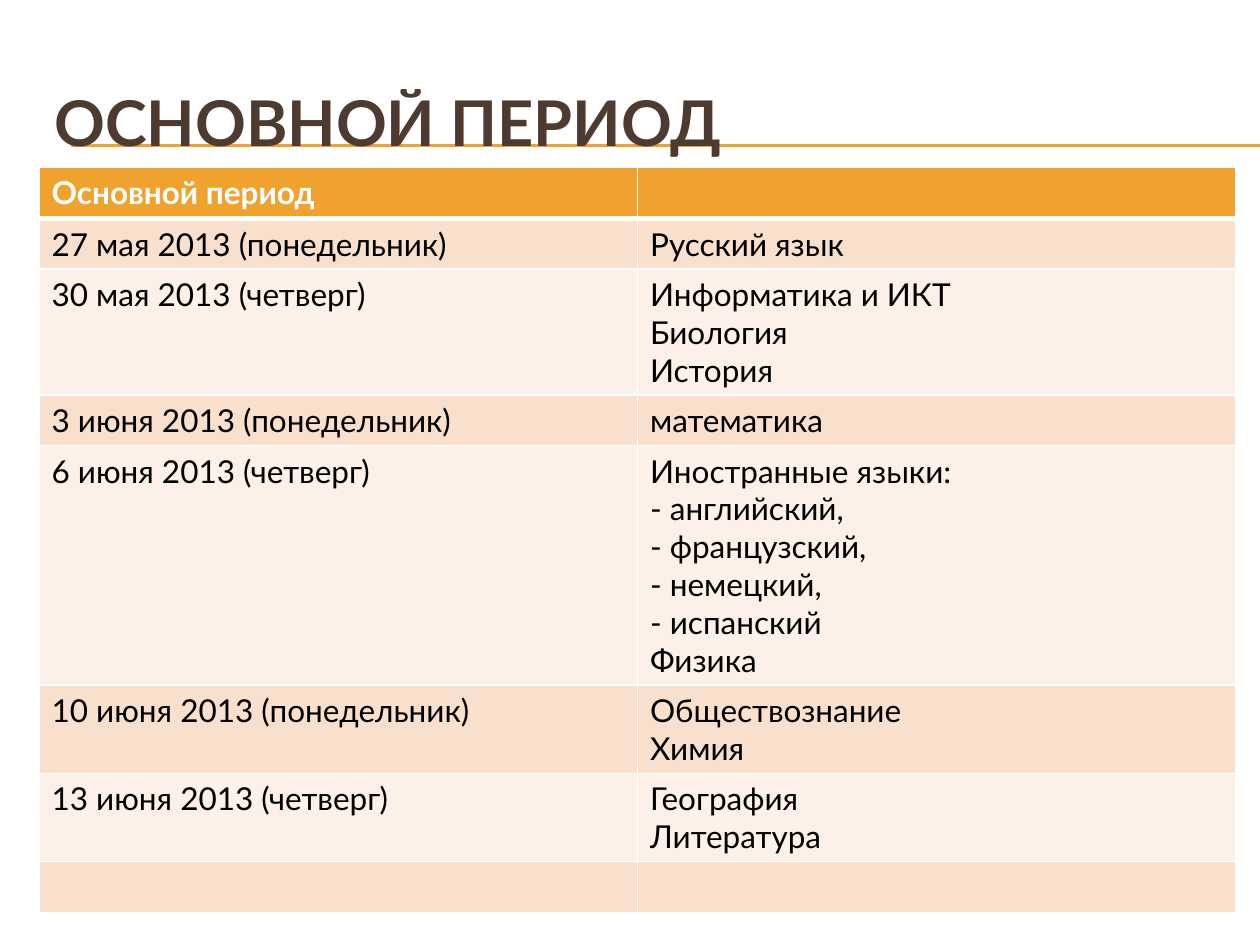
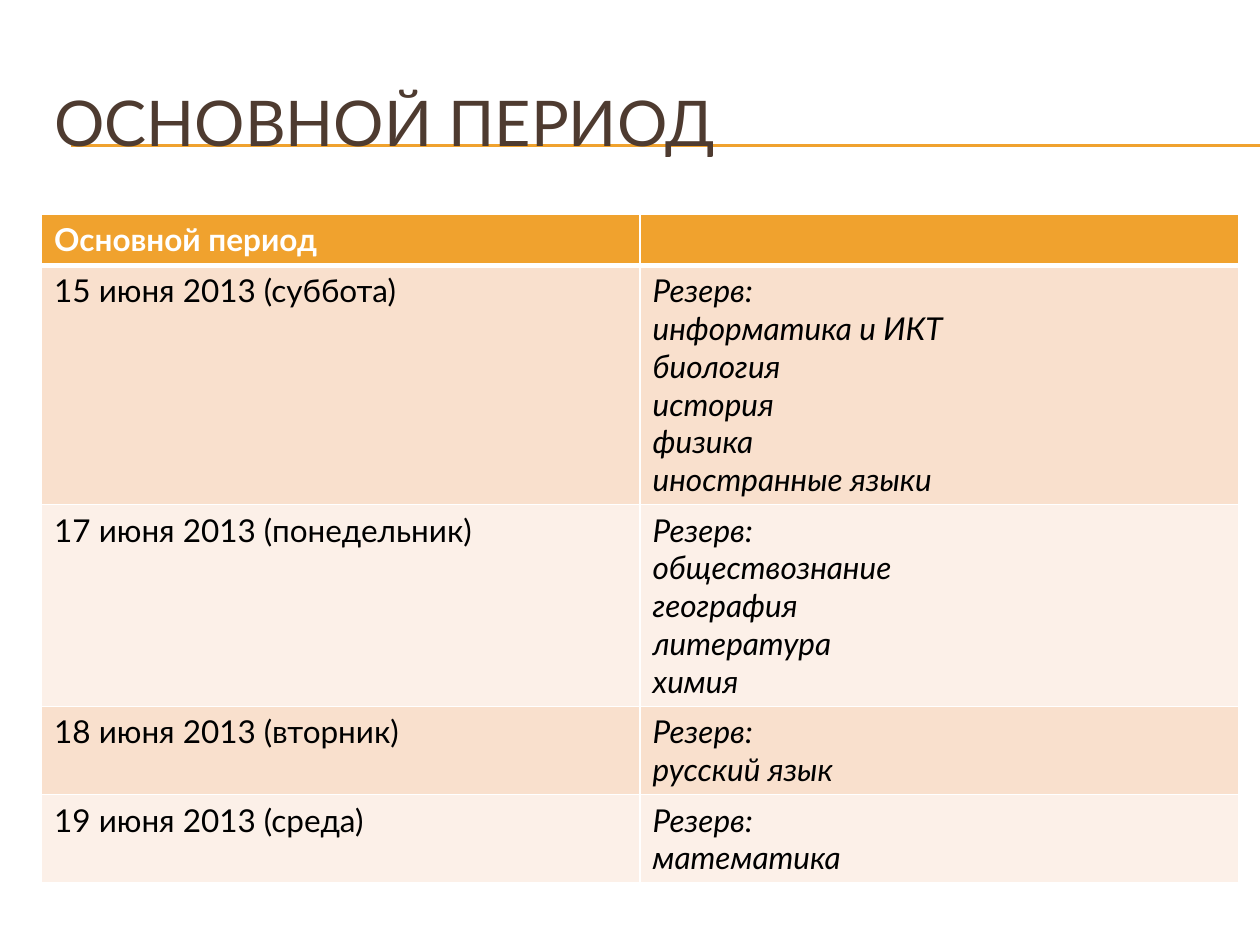
"""Build two slides with the timetable of the main exam period."""
from lxml.etree import SubElement
from pptx import Presentation
from pptx.dml.color import RGBColor
from pptx.enum.text import MSO_ANCHOR, MSO_AUTO_SIZE, PP_ALIGN
from pptx.enum.shapes import MSO_CONNECTOR
from pptx.oxml.ns import qn
from pptx.util import Inches, Pt

COLORS = {
    "accent": "F0A22E",
    "title": "4E3B30",
    "dark_band": "F9E0CD",
    "light_band": "FCF0E8",
    "white": "FFFFFF",
    "text": "000000",
}
FONT = "Lato"
COLUMN_WIDTH = 4.75
LINE_HEIGHT = 0.3
CELL_PADDING = 0.1

SLIDES = [
    {
        "title": "ОСНОВНОЙ ПЕРИОД",
        "title_bold": True,
        "table_at": (0.31, 1.33),
        "subjects_italic": False,
        "rows": [
            ("27 мая 2013 (понедельник)", ["Русский язык"]),
            ("30 мая 2013 (четверг)", ["Информатика и ИКТ", "Биология", "История"]),
            ("3 июня 2013 (понедельник)", ["математика"]),
            ("6 июня 2013 (четверг)", [
                "Иностранные языки: ", "- английский,", "- французский,",
                "- немецкий,", "- испанский", "Физика",
            ]),
            ("10 июня 2013 (понедельник)", ["Обществознание", "Химия"]),
            ("13 июня 2013 (четверг)", ["География", "Литература"]),
            ("", [""]),
        ],
    },
    {
        "title": "ОСНОВНОЙ ПЕРИОД",
        "title_bold": False,
        "table_at": (0.33, 1.7),
        "subjects_italic": True,
        "rows": [
            ("15 июня 2013 (суббота)", [
                "Резерв:", "информатика и ИКТ", "биология", "история",
                "физика", "иностранные языки",
            ]),
            ("17 июня 2013 (понедельник)", [
                "Резерв:", "обществознание", "география", "литература", "химия",
            ]),
            ("18 июня 2013 (вторник)", ["Резерв:", "русский язык"]),
            ("19 июня 2013 (среда)", ["Резерв:", "математика"]),
        ],
    },
]


def add_run(paragraph, text, size, color, bold=False, italic=False):
    run = paragraph.add_run()
    run.text = text
    run.font.name = FONT
    run.font.size = Pt(size)
    run.font.bold = bold
    run.font.italic = italic
    run.font.color.rgb = RGBColor.from_string(COLORS[color])


def format_cell(cell, fill, top, bottom):
    properties = cell._tc.get_or_add_tcPr()
    for side, width in (("L", 1), ("R", 1), ("T", top), ("B", bottom)):
        border = SubElement(properties, qn(f"a:ln{side}"), w=str(Pt(width)))
        border_fill = SubElement(border, qn("a:solidFill"))
        SubElement(border_fill, qn("a:srgbClr"), val=COLORS["white"])
    cell.fill.solid()
    cell.fill.fore_color.rgb = RGBColor.from_string(COLORS[fill])


presentation = Presentation()
presentation.slide_width = Inches(10)
presentation.slide_height = Inches(7.5)

for content in SLIDES:
    slide = presentation.slides.add_slide(presentation.slide_layouts[5])
    title = slide.shapes.title

    for y in (1.15, 1.16):
        rule = slide.shapes.add_connector(
            MSO_CONNECTOR.STRAIGHT, Inches(0.56), Inches(y), Inches(10), Inches(y))
        rule.line.color.rgb = RGBColor.from_string(COLORS["accent"])
        rule.line.width = Pt(0.75)
        SubElement(rule.element.spPr, qn("a:effectLst"))

    title.element.getparent().append(title.element)
    title.left, title.top = Inches(0.33), Inches(0.5)
    title.width, title.height = Inches(9.5), Inches(0.92)
    title.text_frame.auto_size = MSO_AUTO_SIZE.NONE
    title.text_frame.vertical_anchor = MSO_ANCHOR.MIDDLE
    paragraph = title.text_frame.paragraphs[0]
    paragraph.alignment = PP_ALIGN.LEFT
    add_run(paragraph, content["title"], 36, "title", bold=content["title_bold"])

    rows = [("Основной период", [""])] + content["rows"]
    heights = [CELL_PADDING + LINE_HEIGHT * len(subjects) for _, subjects in rows]
    left, top = content["table_at"]
    table = slide.shapes.add_table(
        len(rows), 2, Inches(left), Inches(top),
        Inches(2 * COLUMN_WIDTH), Inches(sum(heights))).table
    for column in table.columns:
        column.width = Inches(COLUMN_WIDTH)

    for row_index, (date, subjects) in enumerate(rows):
        table.rows[row_index].height = Inches(heights[row_index])
        is_header = row_index == 0
        band = "dark_band" if row_index % 2 else "light_band"
        for column_index, lines in enumerate(([date], subjects)):
            cell = table.cell(row_index, column_index)
            format_cell(cell, "accent" if is_header else band,
                        top=3 if row_index == 1 else 1, bottom=3 if is_header else 1)
            paragraph = cell.text_frame.paragraphs[0]
            for line_index, line in enumerate(lines):
                if line_index:
                    paragraph.add_line_break()
                if line:
                    add_run(paragraph, line, 18, "white" if is_header else "text",
                            bold=is_header,
                            italic=column_index == 1 and content["subjects_italic"])

presentation.save("out.pptx")
